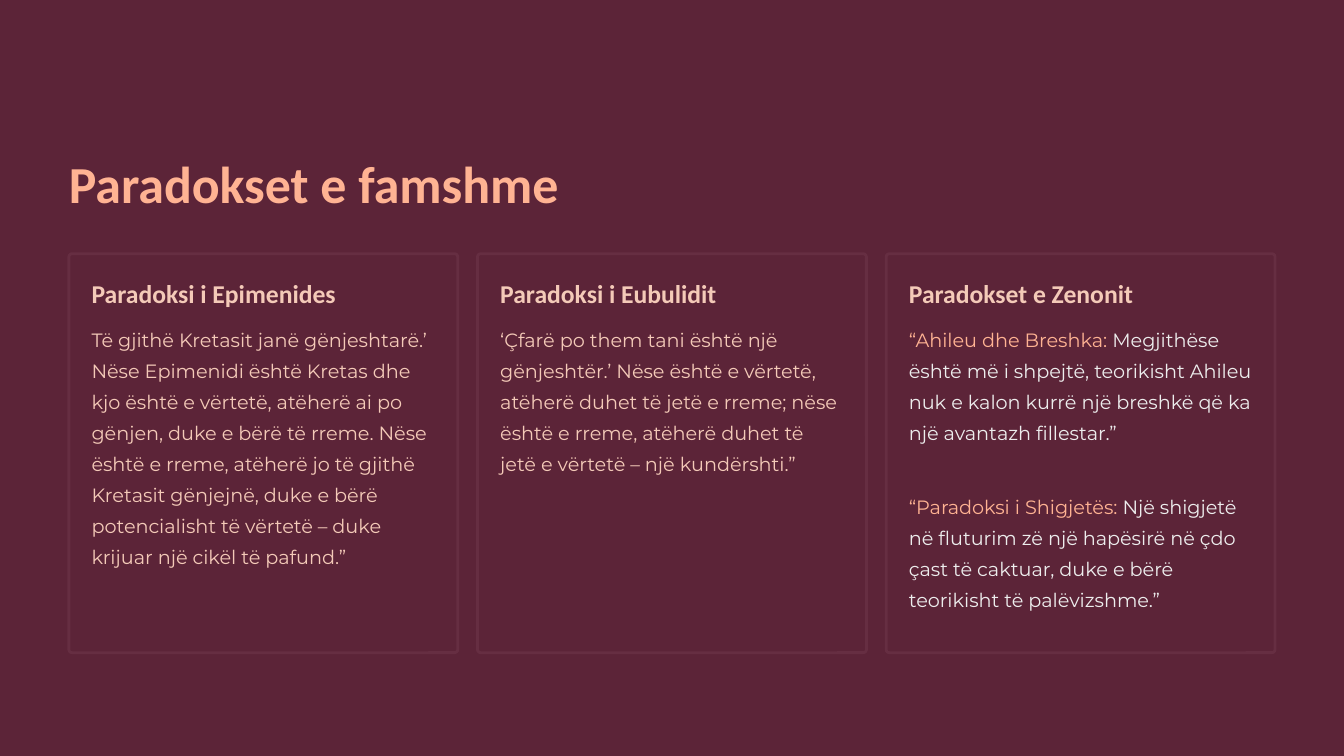
import pptx
import pptx.dml.color
import pptx.enum.shapes
import pptx.util

Inches, Pt = pptx.util.Inches, pptx.util.Pt

COLORS = {
    "background": "5C2438",
    "border": "662E42",
    "accent": "FFB393",
    "soft": "F4CAB8",
    "light": "EDEDED",
}
HEADING_FONT, BODY_FONT = "Calibri", "Montserrat"

MARGIN = 0.82
CARD_TOP, CARD_WIDTH, CARD_HEIGHT = 3.02, 4.63, 4.75
GAP = (16 - 2 * MARGIN - 3 * CARD_WIDTH) / 2
PADDING = 0.27
BODY_TOP, BODY_PITCH = 3.82, 1.98

# Each card: heading, then blocks of (text, color) runs.
CARDS = [
    ("Paradoksi i Epimenides", [
        [("Të gjithë Kretasit janë gënjeshtarë.’ Nëse Epimenidi është Kretas dhe "
          "kjo është e vërtetë, atëherë ai po gënjen, duke e bërë të rreme. Nëse "
          "është e rreme, atëherë jo të gjithë Kretasit gënjejnë, duke e bërë "
          "potencialisht të vërtetë – duke krijuar një cikël të pafund.”", "soft")],
    ]),
    ("Paradoksi i Eubulidit", [
        [("‘Çfarë po them tani është një gënjeshtër.’ Nëse është e vërtetë, "
          "atëherë duhet të jetë e rreme; nëse është e rreme, atëherë duhet të "
          "jetë e vërtetë – një kundërshti.”", "soft")],
    ]),
    ("Paradokset e Zenonit", [
        [("“Ahileu dhe Breshka: ", "accent"),
         ("Megjithëse është më i shpejtë, teorikisht Ahileu nuk e kalon kurrë një "
          "breshkë që ka një avantazh fillestar.”", "light")],
        [("“Paradoksi i Shigjetës: ", "accent"),
         ("Një shigjetë në fluturim zë një hapësirë në çdo çast të caktuar, duke e "
          "bërë teorikisht të palëvizshme.”", "light")],
    ]),
]


def color(name):
    return pptx.dml.color.RGBColor.from_string(COLORS[name])


def add_text(s, box, runs, font, size, leading, bold=False, wrap=False):
    tf = s.shapes.add_textbox(*map(Inches, box)).text_frame
    tf.margin_left = tf.margin_top = tf.margin_right = tf.margin_bottom = 0
    tf.word_wrap = wrap
    p = tf.paragraphs[0]
    p.line_spacing = Pt(leading)
    for text, color_name in runs:
        r = p.add_run()
        r.text = text
        r.font.name = font
        r.font.size = Pt(size)
        r.font.bold = bold
        r.font.color.rgb = color(color_name)


def add_frame(s, left):
    sp = s.shapes.add_shape(
        pptx.enum.shapes.MSO_SHAPE.ROUNDED_RECTANGLE,
        *map(Inches, (left, CARD_TOP, CARD_WIDTH, CARD_HEIGHT)))
    sp.adjustments[0] = 0.008
    sp.shadow.inherit = False
    sp.fill.solid()
    sp.fill.fore_color.rgb = color("background")
    sp.line.color.rgb = color("border")
    sp.line.width = Pt(2.4)


def add_card(s, column, heading, blocks):
    left = MARGIN + column * (CARD_WIDTH + GAP)
    add_frame(s, left)
    text_left = left + PADDING
    text_width = CARD_WIDTH - 2 * PADDING
    add_text(s, (text_left, CARD_TOP + PADDING, text_width, 0.39),
             [(heading, "soft")], HEADING_FONT, 22, 28, bold=True)
    for i, runs in enumerate(blocks):
        add_text(s, (text_left, BODY_TOP + i * BODY_PITCH, text_width, 1.5),
                 runs, BODY_FONT, 16.5, 26.5, wrap=True)


def main():
    prs = pptx.Presentation()
    prs.slide_width, prs.slide_height = Inches(16), Inches(9)
    s = prs.slides.add_slide(prs.slide_layouts[6])
    s.background.fill.solid()
    s.background.fill.fore_color.rgb = color("background")
    add_text(s, (MARGIN, 1.77, 6.24, 0.78), [("Paradokset e famshme", "accent")],
             HEADING_FONT, 44.5, 56, bold=True)
    for column, (heading, blocks) in enumerate(CARDS):
        add_card(s, column, heading, blocks)
    prs.save("out.pptx")


if __name__ == "__main__":
    main()
